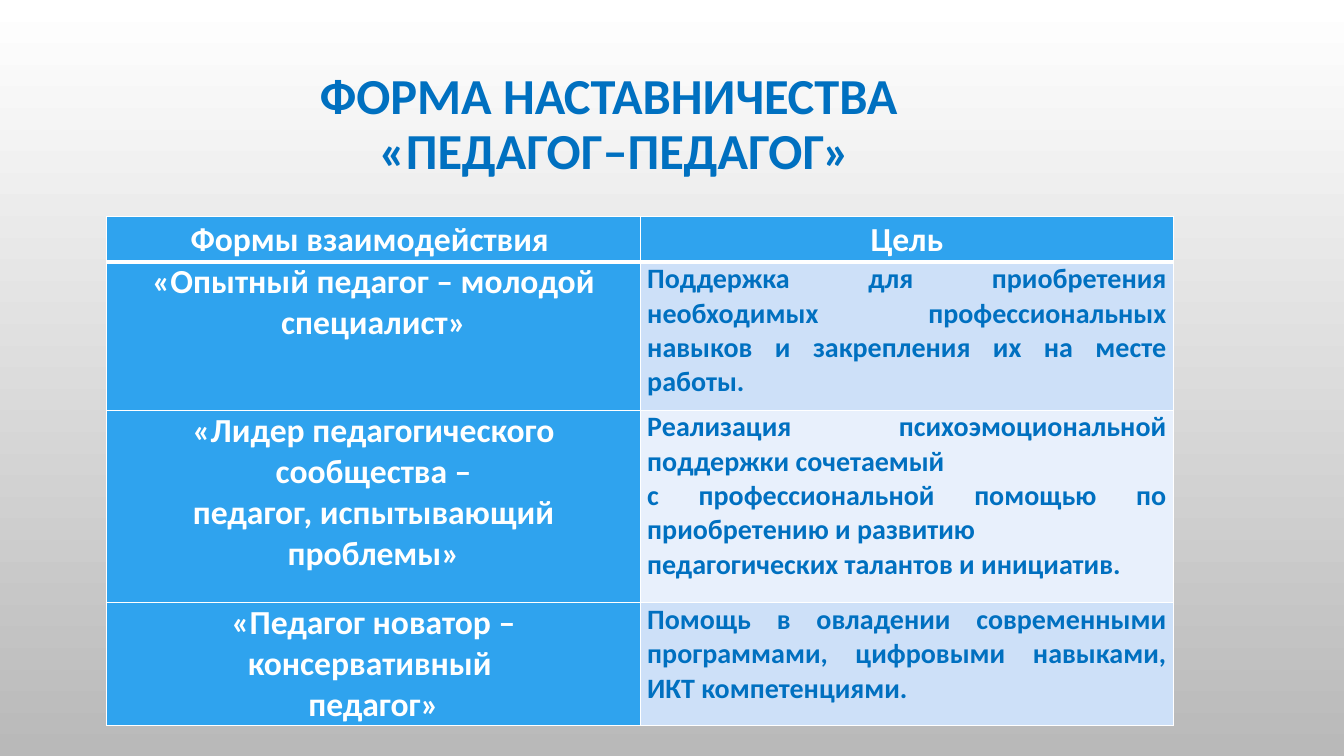
from lxml import etree
from pptx import Presentation
from pptx.dml.color import RGBColor
from pptx.enum import text
from pptx.oxml.ns import qn
from pptx.util import Inches, Pt

TITLE = "ФОРМА НАСТАВНИЧЕСТВА \v«ПЕДАГОГ–ПЕДАГОГ»"
HEADINGS = ["Формы взаимодействия ", "Цель"]
# Each row: paragraphs of the interaction form, paragraphs of its goal
MENTORING = [
    (["«Опытный педагог – молодой специалист»"],
     ["Поддержка для приобретения необходимых профессиональных навыков "
      "и закрепления их на месте работы."]),
    (["«Лидер педагогического сообщества –", "педагог, испытывающий проблемы»"],
     ["Реализация психоэмоциональной поддержки сочетаемый ",
      "с профессиональной помощью по приобретению и развитию ",
      "педагогических талантов и инициатив."]),
    (["«Педагог новатор – консервативный ", "педагог»"],
     ["Помощь в овладении современными программами, цифровыми навыками, "
      "ИКТ компетенциями."]),
]
COLUMN_WIDTH = 5.29
ROW_HEIGHTS = [0.45, 1.47, 1.91, 1.15]
BLUE, SKY, WHITE = "0070C0", "2FA3EE", "FFFFFF"
BANDS = ["CDE0F8", "E8F0FC"]
CENTER, JUSTIFY = text.PP_ALIGN.CENTER, text.PP_ALIGN.JUSTIFY
FORM_STYLE = {"alignment": CENTER, "line_spacing": 1.0}
GOAL_STYLE = {"alignment": JUSTIFY, "line_spacing": 1.0}
HEADING_STYLE = {"alignment": CENTER, "line_spacing": 1.07, "space_after": Pt(8)}
TITLE_STYLE = {"alignment": CENTER, "line_spacing": 0.9}
MARGINS = {"margin_left": Inches(0.07), "margin_right": Inches(0.07),
           "margin_top": 0, "margin_bottom": 0}


def rgb(color):
    return RGBColor.from_string(color)


def set_all(target, values):
    for name, value in values.items():
        setattr(target, name, value)


def format_paragraph(paragraph, style, size, color):
    set_all(paragraph, style)
    for run in paragraph.runs:
        set_all(run.font, {"name": "Calibri", "size": Pt(size), "bold": True})
        run.font.color.rgb = rgb(color)


def add_borders(cell, widths):
    """Draw white cell borders; widths maps L, R, T and B to points."""
    properties = cell._tc.get_or_add_tcPr()
    for side, width in widths.items():
        line = etree.SubElement(properties, qn(f"a:ln{side}"), w=str(Pt(width)))
        fill = etree.SubElement(line, qn("a:solidFill"))
        etree.SubElement(fill, qn("a:srgbClr"), val=WHITE)


def fill_cell(cell, paragraphs, style, size, color, background, row):
    set_all(cell, MARGINS)
    cell.text = "\n".join(paragraphs)
    for paragraph in cell.text_frame.paragraphs:
        format_paragraph(paragraph, style, size, color)
    add_borders(cell, {"L": 1, "R": 1, "T": 3 if row == 1 else 1,
                       "B": 3 if row == 0 else 1})
    cell.fill.solid()
    cell.fill.fore_color.rgb = rgb(background)


def main():
    deck = Presentation()
    deck.slide_width, deck.slide_height = Inches(13.33), Inches(7.5)
    slide = deck.slides.add_slide(deck.slide_layouts[5])

    backdrop = slide.background.fill
    backdrop.gradient()
    backdrop.gradient_angle = 270
    for stop, color, position in zip(backdrop.gradient_stops, [WHITE, "B9B9B9"], [0, 1]):
        stop.color.rgb = rgb(color)
        stop.position = position

    title = slide.shapes.title
    set_all(title, {"left": Inches(0.2), "top": Inches(0.5),
                    "width": Inches(11.79), "height": Inches(1.49)})
    title.text_frame.text = TITLE
    title.text_frame.vertical_anchor = text.MSO_ANCHOR.MIDDLE
    format_paragraph(title.text_frame.paragraphs[0], TITLE_STYLE, 36, BLUE)

    table = slide.shapes.add_table(
        len(ROW_HEIGHTS), len(HEADINGS), Inches(1.06), Inches(2.15),
        Inches(COLUMN_WIDTH * len(HEADINGS)), Inches(sum(ROW_HEIGHTS))).table
    for column in table.columns:
        column.width = Inches(COLUMN_WIDTH)
    for row, height in zip(table.rows, ROW_HEIGHTS):
        row.height = Inches(height)

    for column, heading in enumerate(HEADINGS):
        fill_cell(table.cell(0, column), [heading], HEADING_STYLE, 24, WHITE, SKY, 0)
    for row, (form, goal) in enumerate(MENTORING, 1):
        fill_cell(table.cell(row, 0), form, FORM_STYLE, 24, WHITE, SKY, row)
        fill_cell(table.cell(row, 1), goal, GOAL_STYLE, 20, BLUE,
                  BANDS[(row - 1) % len(BANDS)], row)

    deck.save("out.pptx")


if __name__ == "__main__":
    main()
